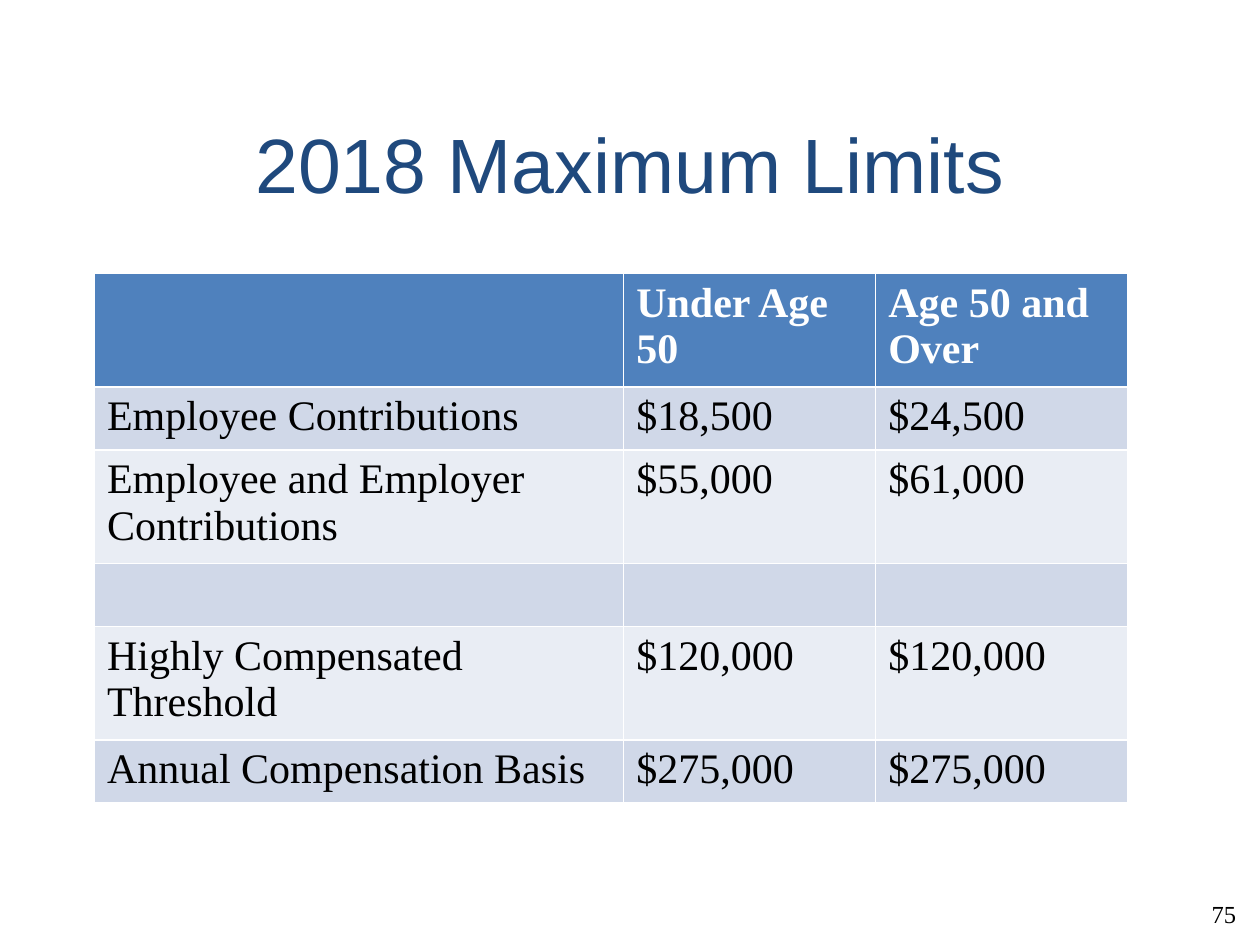
import pptx
import pptx.util
import pptx.dml.color
import pptx.enum.text
import pptx.oxml.ns
import lxml.etree

Inches = pptx.util.Inches
Pt = pptx.util.Pt
ALIGN = pptx.enum.text.PP_ALIGN
MIDDLE = pptx.enum.text.MSO_ANCHOR.MIDDLE

SERIF = "Times New Roman"
BANDS = ("E9EDF4", "D0D8E8")
ROWS = (
    ("", "Under Age 50", "Age 50 and Over"),
    ("Employee Contributions", "$18,500", "$24,500"),
    ("Employee and Employer Contributions", "$55,000", "$61,000"),
    ("", "", ""),
    ("Highly Compensated Threshold", "$120,000", "$120,000"),
    ("Annual Compensation Basis", "$275,000", "$275,000"),
)


def color(code):
    """Turn a hex string into a colour."""
    return pptx.dml.color.RGBColor.from_string(code)


def write(frame, text, hue, align=None, **style):
    """Put one formatted paragraph into a text frame."""
    para = frame.paragraphs[0]
    para.alignment = align
    run = para.add_run()
    run.text = text
    for name, value in style.items():
        setattr(run.font, name, value)
    run.font.color.rgb = color(hue)


def blank(frame, size):
    """Give an empty paragraph its text size."""
    tag = pptx.oxml.ns.qn("a:endParaRPr")
    end = lxml.etree.SubElement(frame.paragraphs[0]._p, tag)
    end.set("sz", str(size * 100))
    font = lxml.etree.SubElement(end, pptx.oxml.ns.qn("a:latin"))
    font.set("typeface", SERIF)


def place(shape, left, top, width, height):
    """Set the position and size of a shape."""
    box = {"left": left, "top": top, "width": width, "height": height}
    for name, value in box.items():
        setattr(shape, name, Inches(value))


def add_title(slide, text):
    """Fill and place the title."""
    title = slide.shapes.title
    place(title, 0.75, 0.67, 8.5, 1.25)
    title.text_frame.vertical_anchor = MIDDLE
    write(title.text_frame, text, "1F497D", ALIGN.CENTER,
          size=Pt(44), name="Arial")


def add_grid(slide, rows, widths):
    """Add the table of limits with a header and banded rows."""
    frame = slide.shapes.add_table(
        len(rows), len(widths), Inches(0.75), Inches(2.17),
        Inches(sum(widths)), Inches(0.41 * len(rows)))
    table = frame.table
    for col, width in zip(table.columns, widths):
        col.width = Inches(width)
    for i, row in enumerate(rows):
        head = i == 0
        for j, text in enumerate(row):
            cell = table.cell(i, j)
            cell.fill.solid()
            cell.fill.fore_color.rgb = color("4F81BD" if head else BANDS[i % 2])
            if text:
                write(cell.text_frame, text, "FFFFFF" if head else "000000",
                      size=Pt(24), name=SERIF, bold=head)
            else:
                blank(cell.text_frame, 24)


def add_number(slide, text):
    """Add the page number in the lower right corner."""
    box = slide.shapes.add_textbox(
        Inches(9.48), Inches(7.09), Inches(0.43), Inches(0.33))
    frame = box.text_frame
    frame.word_wrap = False
    frame.auto_size = pptx.enum.text.MSO_AUTO_SIZE.SHAPE_TO_FIT_TEXT
    frame.vertical_anchor = MIDDLE
    write(frame, text, "000000", ALIGN.RIGHT, size=Pt(14), name=SERIF)


def main():
    """Build and save the slide."""
    deck = pptx.Presentation()
    deck.slide_width, deck.slide_height = Inches(10), Inches(7.5)
    slide = deck.slides.add_slide(deck.slide_layouts[5])
    add_number(slide, "75")
    add_title(slide, "2018 Maximum Limits")
    add_grid(slide, ROWS, (4.2, 2, 2))
    deck.save("out.pptx")


if __name__ == "__main__":
    main()
